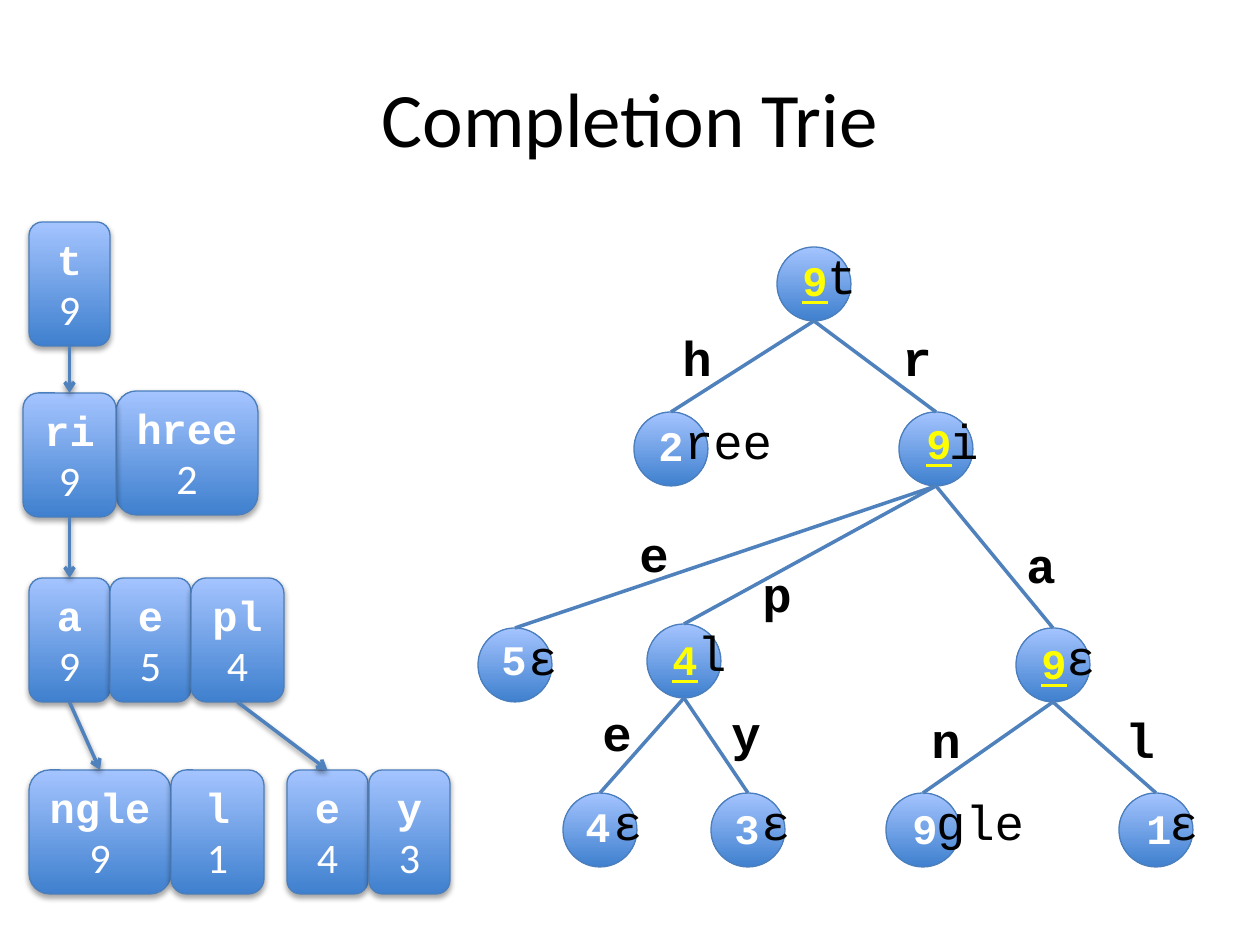
from dataclasses import dataclass
from typing import Any

from lxml.etree import SubElement
from pptx import Presentation
from pptx.dml.color import RGBColor
from pptx.enum.shapes import MSO_CONNECTOR as CONN, MSO_SHAPE as SHAPE
from pptx.enum.text import MSO_ANCHOR as ANCHOR, MSO_AUTO_SIZE as FIT, PP_ALIGN as ALIGN
from pptx.oxml.ns import qn
from pptx.util import Pt

PX = 914400 // 126
BOX_H, NODE_D = 124, 74
LABEL_SIZE, COUNT_SIZE = (55, 72), (50, 63)
CODE, BODY = "Courier New", "Calibri"
WHITE, BLACK, YELLOW = "FFFFFF", "000000", "FFFF00"
DARK, LIGHT, OUTLINE, EDGE = "3F80CE", "A4C4FF", "4B7EBC", "4F81BD"


@dataclass
class Box:
    """A list cell of the linked layout, keyed by its path in the trie."""
    key: str
    text: str
    count: str
    x: int
    y: int
    w: int = 81


@dataclass
class Node:
    """A tree node, keyed by path, with its count and incoming edge label."""
    key: str
    rest: str
    x: int
    y: int
    count: str
    count_at: tuple[int, int]
    label_at: tuple[int, int] | None = None
    hot: bool = False


BOXES = [
    Box("t", "t", "9", 29, 222),
    Box("th", "hree", "2", 116, 391, 142),
    Box("tr", "ri", "9", 23, 393, 93),
    Box("tra", "a", "9", 29, 578),
    Box("tre", "e", "5", 110, 578),
    Box("trp", "pl", "4", 191, 578, 93),
    Box("trpe", "e", "4", 287, 770),
    Box("trpy", "y", "3", 369, 770),
    Box("tran", "ngle", "9", 29, 770, 142),
    Box("tral", "l", "1", 171, 770, 93),
]
LINKS = [("t", "tr"), ("tr", "tra"), ("trp", "trpe"), ("tra", "tran")]
NODES = [
    Node("t", "t", 777, 247, "9", (790, 248), hot=True),
    Node("tr", "i", 899, 412, "9", (914, 411), (890, 321), True),
    Node("th", "ree", 634, 412, "2", (646, 413), (670, 321)),
    Node("tra", "ε", 1016, 628, "9", (1029, 631), (1014, 528), True),
    Node("tre", "ε", 478, 628, "5", (489, 627), (627, 517)),
    Node("trp", "l", 647, 624, "4", (660, 627), (750, 557), True),
    Node("trpy", "ε", 711, 793, "3", (722, 796), (719, 696)),
    Node("trpe", "ε", 563, 793, "4", (573, 794), (590, 696)),
    Node("tral", "ε", 1119, 793, "1", (1134, 796), (1113, 703)),
    Node("tran", "gle", 886, 793, "9", (900, 796), (919, 703)),
]


def px(*values: int) -> list[int]:
    """Turn pixel lengths into EMU."""
    return [v * PX for v in values]


def rgb(color: str) -> RGBColor:
    """Return the colour of a hex string."""
    return RGBColor.from_string(color)


def set_all(target: Any, values: dict[str, Any]) -> None:
    """Set every attribute named in values on the target."""
    for name, value in values.items():
        setattr(target, name, value)


def add_run(p: Any, text: str, size: int, color: str, **font: Any) -> None:
    """Append a formatted run to a paragraph."""
    r = p.add_run()
    r.text = text
    set_all(r.font, {"name": CODE, "size": Pt(size), **font})
    r.font.color.rgb = rgb(color)


def add_shadow(s: Any, dist: int, alpha: int) -> None:
    """Give an object a soft shadow that falls straight down."""
    effects = SubElement(s._element.spPr, qn("a:effectLst"))
    outer = SubElement(effects, qn("a:outerShdw"), blurRad="40000", dist=str(dist),
                       dir="5400000", rotWithShape="0")
    color = SubElement(outer, qn("a:srgbClr"), val=BLACK)
    SubElement(color, qn("a:alpha"), val=str(alpha * 1000))


def add_blue_shape(shapes: Any, kind: SHAPE, x: int, y: int, w: int, h: int) -> Any:
    """Add an outlined shape with the blue vertical gradient."""
    s = shapes.add_shape(kind, *px(x, y, w, h))
    s.fill.gradient()
    s.fill.gradient_angle = 90
    for stop, color, position in zip(s.fill.gradient_stops, (DARK, LIGHT), (0, 1)):
        stop.color.rgb = rgb(color)
        stop.position = position
    s.line.color.rgb = rgb(OUTLINE)
    s.line.width = Pt(0.75)
    return s


def add_box(shapes: Any, box: Box) -> Any:
    """Draw a list cell with its letters above its count."""
    s = add_blue_shape(shapes, SHAPE.ROUNDED_RECTANGLE, box.x, box.y, box.w, BOX_H)
    add_shadow(s, 23000, 35)
    s.text_frame.vertical_anchor = ANCHOR.MIDDLE
    p = s.text_frame.paragraphs[0]
    p.alignment = ALIGN.CENTER
    add_run(p, box.text, 24, WHITE, bold=True)
    p.add_line_break()
    add_run(p, box.count, 24, WHITE, name=BODY)
    return s


def add_node(shapes: Any, node: Node) -> Any:
    """Draw a tree node with the rest of its letters beside it."""
    s = add_blue_shape(shapes, SHAPE.OVAL, node.x, node.y, NODE_D, NODE_D)
    s.shadow.inherit = False
    left, top, right, bottom = px(110, 5, 13, 6)
    tf = s.text_frame
    set_all(tf, {"margin_left": left, "margin_top": top, "margin_right": right,
                 "margin_bottom": bottom, "word_wrap": False,
                 "vertical_anchor": ANCHOR.BOTTOM})
    p = tf.paragraphs[0]
    p.alignment = ALIGN.LEFT
    add_run(p, node.rest, 28, BLACK)
    return s


def add_link(shapes: Any, parent: Any, child: Any) -> Any:
    """Draw a line from the bottom of the parent to the top of the child."""
    s = shapes.add_connector(CONN.STRAIGHT,
                             parent.left + parent.width // 2, parent.top + parent.height,
                             child.left + child.width // 2, child.top)
    s.line.color.rgb = rgb(EDGE)
    s.line.width = Pt(2)
    return s


def add_arrow(shapes: Any, parent: Any, child: Any) -> None:
    """Draw a shadowed arrow between two list cells."""
    s = add_link(shapes, parent, child)
    SubElement(s._element.spPr.find(qn("a:ln")), qn("a:tailEnd"), type="arrow")
    add_shadow(s, 20000, 38)


def add_edge(shapes: Any, parent: Any, child: Any) -> None:
    """Draw a plain edge between two tree nodes."""
    s = add_link(shapes, parent, child)
    SubElement(s._element.spPr, qn("a:effectLst"))


def add_text(shapes: Any, at: tuple[int, int], area: tuple[int, int], text: str,
             size: int, color: str, underline: bool = False) -> None:
    """Add a bold letter or digit in its own text box."""
    tf = shapes.add_textbox(*px(*at, *area)).text_frame
    set_all(tf, {"word_wrap": False, "auto_size": FIT.SHAPE_TO_FIT_TEXT})
    add_run(tf.paragraphs[0], text, size, color, bold=True, underline=underline)


def main() -> None:
    """Build the slide and save it."""
    prs = Presentation()
    prs.slide_width, prs.slide_height = px(1260, 945)
    shapes = prs.slides.add_slide(prs.slide_layouts[5]).shapes
    left, top, width, height = px(63, 38, 1134, 158)
    set_all(shapes.title, {"left": left, "top": top, "width": width, "height": height})
    shapes.title.text_frame.vertical_anchor = ANCHOR.MIDDLE
    p = shapes.title.text_frame.paragraphs[0]
    p.alignment = ALIGN.CENTER
    add_run(p, "Completion Trie", 44, BLACK, name=BODY)

    cells = {box.key: add_box(shapes, box) for box in BOXES}
    for parent, child in LINKS:
        add_arrow(shapes, cells[parent], cells[child])
    circles = {node.key: add_node(shapes, node) for node in NODES}
    for node in NODES:
        if node.label_at:
            add_edge(shapes, circles[node.key[:-1]], circles[node.key])
            add_text(shapes, node.label_at, LABEL_SIZE, node.key[-1], 28, BLACK)
    for node in NODES:
        add_text(shapes, node.count_at, COUNT_SIZE, node.count, 24,
                 YELLOW if node.hot else WHITE, node.hot)
    prs.save("out.pptx")


if __name__ == "__main__":
    main()
